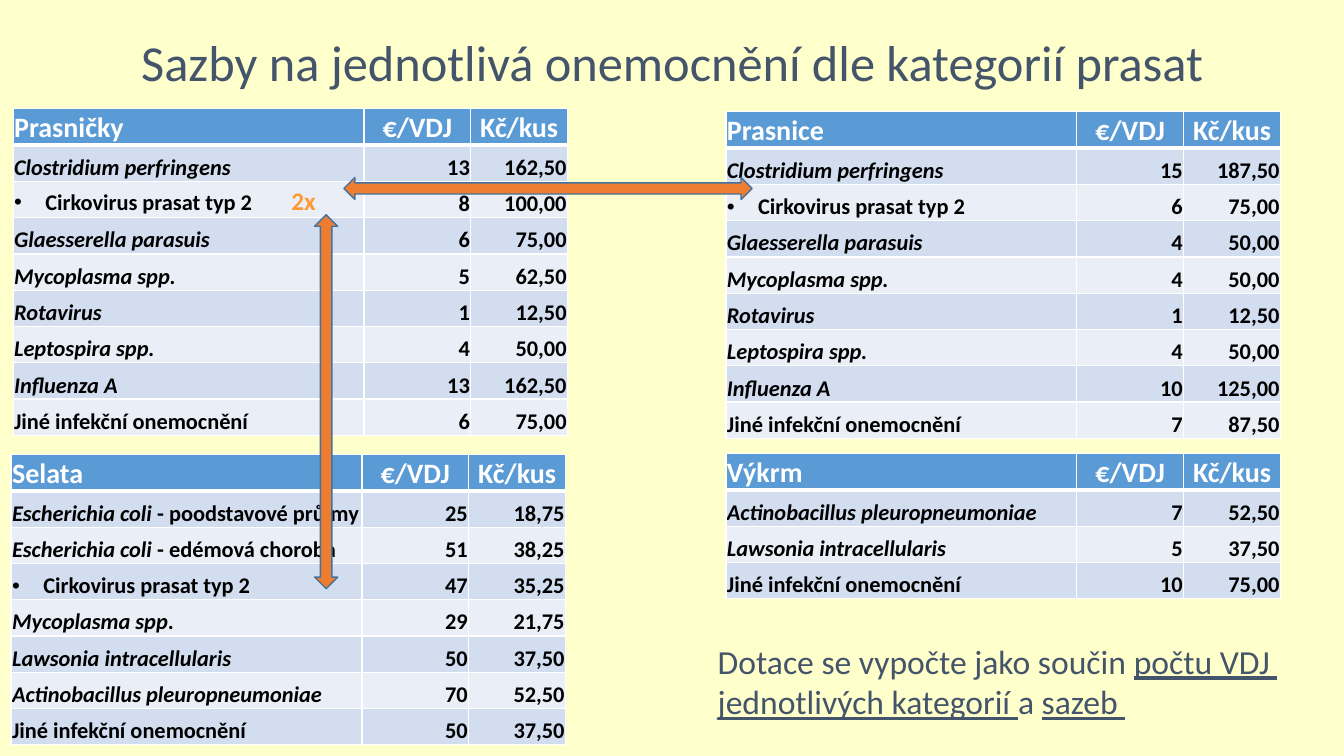
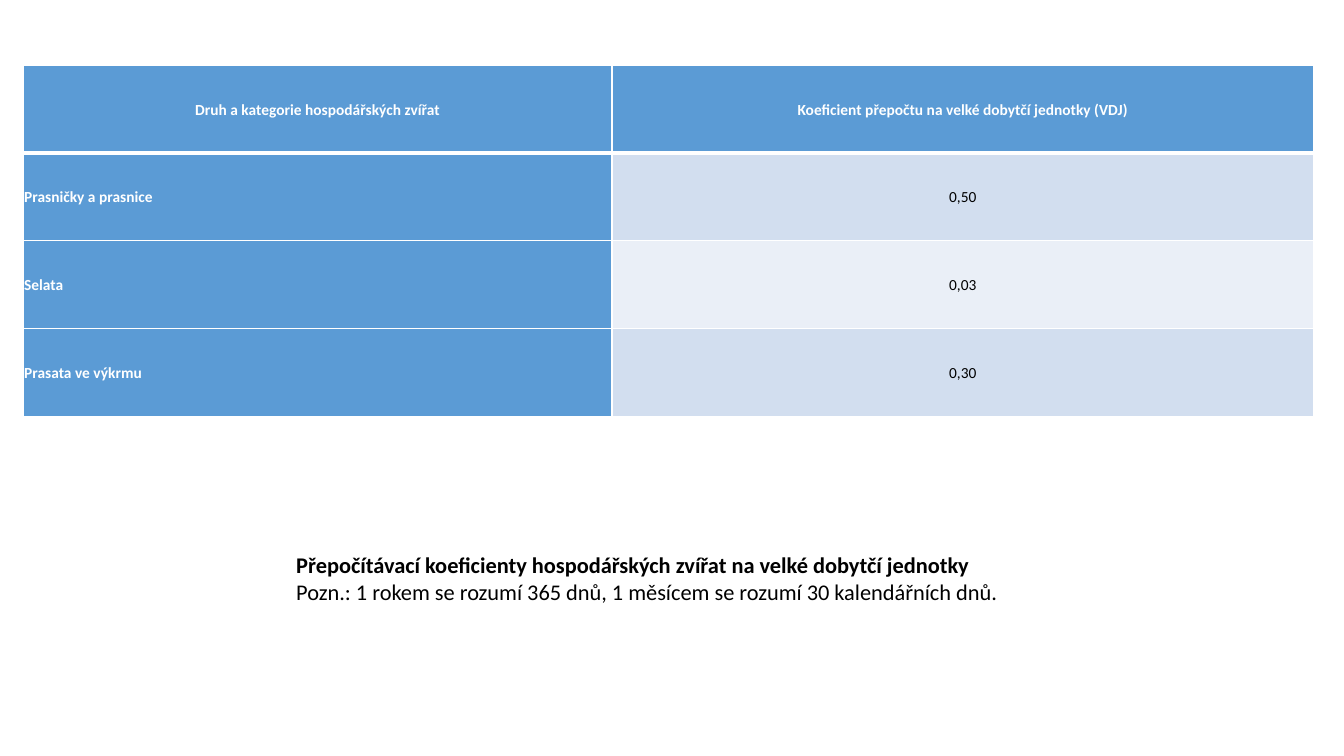
from lxml.etree import SubElement
from pptx import Presentation
from pptx.dml.color import RGBColor
from pptx.enum.shapes import MSO_SHAPE as Shape
from pptx.enum.text import MSO_ANCHOR as Anchor, MSO_AUTO_SIZE as AutoSize, PP_ALIGN as Align
from pptx.oxml.ns import qn
from pptx.util import Inches, Pt

# Shared look
FONT = "Calibri"
CREAM, WHITE, BLACK = "FFFFCC", "FFFFFF", "000000"
SLATE, HIGHLIGHT = "44546A", "FF9933"
HEADER, BANDS = "5B9BD5", ("D2DEEF", "EAEFF7")
ARROW, ARROW_LINE = "ED7D31", "43739E"

# Rates: *italic* species names, "• " for a bulleted row, a tab before the highlight
TITLE = "Sazby na jednotlivá onemocnění dle kategorií prasat"
RATE_HEADS = ("€/VDJ", "Kč/kus")
RATE_COLUMNS, RATE_ROW = (3.48, 1.06, 0.96), 0.36
OTHER = "Jiné infekční onemocnění"
CIRCO = "• Cirkovirus prasat typ 2"
RATES = [
    ("Prasničky", 0.13, 1.08, [
        ("*Clostridium perfringens*", "13", "162,50"),
        (CIRCO + "\t2x", "8", "100,00"),
        ("*Glaesserella parasuis*", "6", "75,00"),
        ("*Mycoplasma spp.*", "5", "62,50"),
        ("*Rotavirus*", "1", "12,50"),
        ("*Leptospira spp.*", "4", "50,00"),
        ("*Influenza A*", "13", "162,50"),
        (OTHER, "6", "75,00")]),
    ("Prasnice", 7.2, 1.11, [
        ("*Clostridium perfringens*", "15", "187,50"),
        (CIRCO, "6", "75,00"),
        ("*Glaesserella parasuis*", "4", "50,00"),
        ("*Mycoplasma spp.*", "4", "50,00"),
        ("*Rotavirus*", "1", "12,50"),
        ("*Leptospira spp.*", "4", "50,00"),
        ("*Influenza A*", "10", "125,00"),
        (OTHER, "7", "87,50")]),
    ("Selata", 0.11, 4.51, [
        ("*Escherichia coli *- poodstavové průjmy", "25", "18,75"),
        ("*Escherichia coli *- edémová choroba", "51", "38,25"),
        (CIRCO, "47", "35,25"),
        ("*Mycoplasma spp*.", "29", "21,75"),
        ("*Lawsonia intracellularis*", "50", "37,50"),
        ("*Actinobacillus pleuropneumoniae*", "70", "52,50"),
        (OTHER, "50", "37,50")]),
    ("Výkrm", 7.2, 4.5, [
        ("*Actinobacillus pleuropneumoniae*", "7", "52,50"),
        ("*Lawsonia intracellularis*", "5", "37,50"),
        (OTHER, "10", "75,00")]),
]
# Lines of (text, underlined)
SUBSIDY = [
    [("Dotace se vypočte jako součin ", False), ("počtu VDJ ", True)],
    [("jednotlivých kategorií ", True), ("a ", False), ("sazeb ", True)],
]
ARROWS = [
    (Shape.UP_DOWN_ARROW, (3.12, 2.13, 0.23, 3.71)),
    (Shape.LEFT_RIGHT_ARROW, (3.41, 1.76, 4.05, 0.22)),
]

# Conversion coefficients
COEFFICIENT_COLUMNS, COEFFICIENT_ROW = (5.84, 6.96), 0.87
COEFFICIENTS = [
    ("Druh a kategorie hospodářských zvířat", "Koeficient přepočtu na velké dobytčí jednotky (VDJ)"),
    ("Prasničky a prasnice", "0,50"),
    ("Selata", "0,03"),
    ("Prasata ve výkrmu", "0,30"),
]
NOTE = [
    ("Přepočítávací koeficienty hospodářských zvířat na velké dobytčí jednotky", True),
    ("Pozn.: 1 rokem se rozumí 365 dnů, 1 měsícem se rozumí 30 kalendářních dnů.", False),
]


def rgb(color):
    return RGBColor.from_string(color)


def style(font, size, color, bold=False):
    font.name, font.size, font.bold = FONT, Pt(size), bold
    font.color.rgb = rgb(color)


def add_slide(prs, layout, background):
    slide = prs.slides.add_slide(prs.slide_layouts[layout])
    slide.background.fill.solid()
    slide.background.fill.fore_color.rgb = rgb(background)
    return slide


def border(cell, **widths):
    """White borders; widths overrides the 1 pt default by side."""
    properties = cell._tc.get_or_add_tcPr()
    for side in "LRTB":
        line = SubElement(properties, qn(f"a:ln{side}"), w=str(Pt(widths.get(side, 1))))
        SubElement(SubElement(line, qn("a:solidFill")), qn("a:srgbClr"), val=WHITE)


def add_grid(slide, left, top, columns, row_height, rows, anchor, bottom_margin):
    """Place a table with borders and bands; yield row, column, text and cell."""
    table = slide.shapes.add_table(
        len(rows), len(columns), Inches(left), Inches(top),
        Inches(sum(columns)), Inches(row_height * len(rows))).table
    for column, width in zip(table.columns, columns):
        column.width = Inches(width)
    for r, row in enumerate(rows):
        table.rows[r].height = Inches(row_height)
        for c, text in enumerate(row):
            cell = table.cell(r, c)
            cell.margin_left = cell.margin_right = cell.margin_top = Inches(0.01)
            cell.margin_bottom = Inches(bottom_margin)
            cell.vertical_anchor = anchor
            border(cell, **({"B": 3} if r == 0 else {"T": 3} if r == 1 else {}))
            cell.fill.solid()
            cell.fill.fore_color.rgb = rgb(BANDS[(r - 1) % 2] if r else HEADER)
            yield r, c, text, cell


def add_bullet(paragraph):
    properties = paragraph._p.get_or_add_pPr()
    properties.set("marL", str(Inches(0.31)))
    properties.set("indent", str(-Inches(0.31)))
    SubElement(properties, qn("a:buFont"), typeface="Arial")
    SubElement(properties, qn("a:buChar"), char="•")
    tabs = SubElement(properties, qn("a:tabLst"))
    SubElement(tabs, qn("a:tab"), pos=str(Inches(2.75)), algn="l")


def write_disease(paragraph, text):
    if text.startswith("• "):
        add_bullet(paragraph)
        text = text[2:]
    text, tab, highlight = text.partition("\t")
    for i, part in enumerate(text.split("*")):
        if part:
            run = paragraph.add_run()
            run.text = part
            style(run.font, 16, BLACK, True)
            run.font.italic = i % 2 == 1
    if highlight:
        run = paragraph.add_run()
        run.text = tab + highlight
        style(run.font, 18, HIGHLIGHT, True)


def add_rates(slide, category, left, top, diseases):
    rows = [(category, *RATE_HEADS), *diseases]
    for r, c, text, cell in add_grid(slide, left, top, RATE_COLUMNS, RATE_ROW,
                                     rows, Anchor.BOTTOM, 0):
        paragraph = cell.text_frame.paragraphs[0]
        if r and c == 0:
            write_disease(paragraph, text)
            continue
        paragraph.text = text
        style(paragraph.font, 16 if r else 20, BLACK if r else WHITE, True)
        if c:
            paragraph.alignment = Align.RIGHT if r else Align.CENTER


def add_text(slide, box, wrap):
    frame = slide.shapes.add_textbox(*map(Inches, box)).text_frame
    frame.word_wrap = wrap
    return frame


def paragraphs(frame, lines):
    """Pair each line with its own paragraph."""
    for i, line in enumerate(lines):
        yield (frame.add_paragraph() if i else frame.paragraphs[0]), line


def build_rates(prs):
    slide = add_slide(prs, 5, CREAM)

    # Title
    title = slide.shapes.title
    title.left, title.top, title.width, title.height = map(Inches, (0.92, -0.08, 11.5, 1.45))
    title.text_frame.text = TITLE
    title.text_frame.vertical_anchor = Anchor.MIDDLE
    title.text_frame.auto_size = AutoSize.NONE
    heading = title.text_frame.paragraphs[0]
    heading.alignment, heading.line_spacing = Align.CENTER, 0.9
    style(heading.font, 36, SLATE)

    # Four rate tables
    for rates in RATES:
        add_rates(slide, *rates)

    # Subsidy rule
    frame = add_text(slide, (7.02, 6.31, 5.88, 0.91), False)
    for paragraph, line in paragraphs(frame, SUBSIDY):
        style(paragraph.font, 24, SLATE)
        for text, underlined in line:
            run = paragraph.add_run()
            run.text, run.font.underline = text, underlined

    # Arrows linking the circovirus rows
    for kind, box in ARROWS:
        arrow = slide.shapes.add_shape(kind, *map(Inches, box))
        arrow.shadow.inherit = False
        arrow.fill.solid()
        arrow.fill.fore_color.rgb = rgb(ARROW)
        arrow.line.color.rgb = rgb(ARROW_LINE)
        arrow.line.width = Pt(1)


def build_coefficients(prs):
    slide = add_slide(prs, 6, WHITE)

    # Coefficient table with a coloured first column
    for r, c, text, cell in add_grid(slide, 0.23, 0.65, COEFFICIENT_COLUMNS, COEFFICIENT_ROW,
                                     COEFFICIENTS, Anchor.MIDDLE, 0.01):
        heading = r == 0 or c == 0
        if heading:
            cell.fill.fore_color.rgb = rgb(HEADER)
        paragraph = cell.text_frame.paragraphs[0]
        paragraph.text, paragraph.line_spacing = text, 1.07
        paragraph.alignment = Align.LEFT if r and c == 0 else Align.CENTER
        style(paragraph.font, 11, WHITE if heading else BLACK, heading)

    # Note
    frame = add_text(slide, (2.84, 5.42, 8.63, 0.91), True)
    for paragraph, (text, bold) in paragraphs(frame, NOTE):
        paragraph.text = text
        style(paragraph.font, 16, BLACK, bold)


def main():
    prs = Presentation()
    prs.slide_width, prs.slide_height = Inches(13.33), Inches(7.5)
    build_rates(prs)
    build_coefficients(prs)
    prs.save("out.pptx")


if __name__ == "__main__":
    main()
